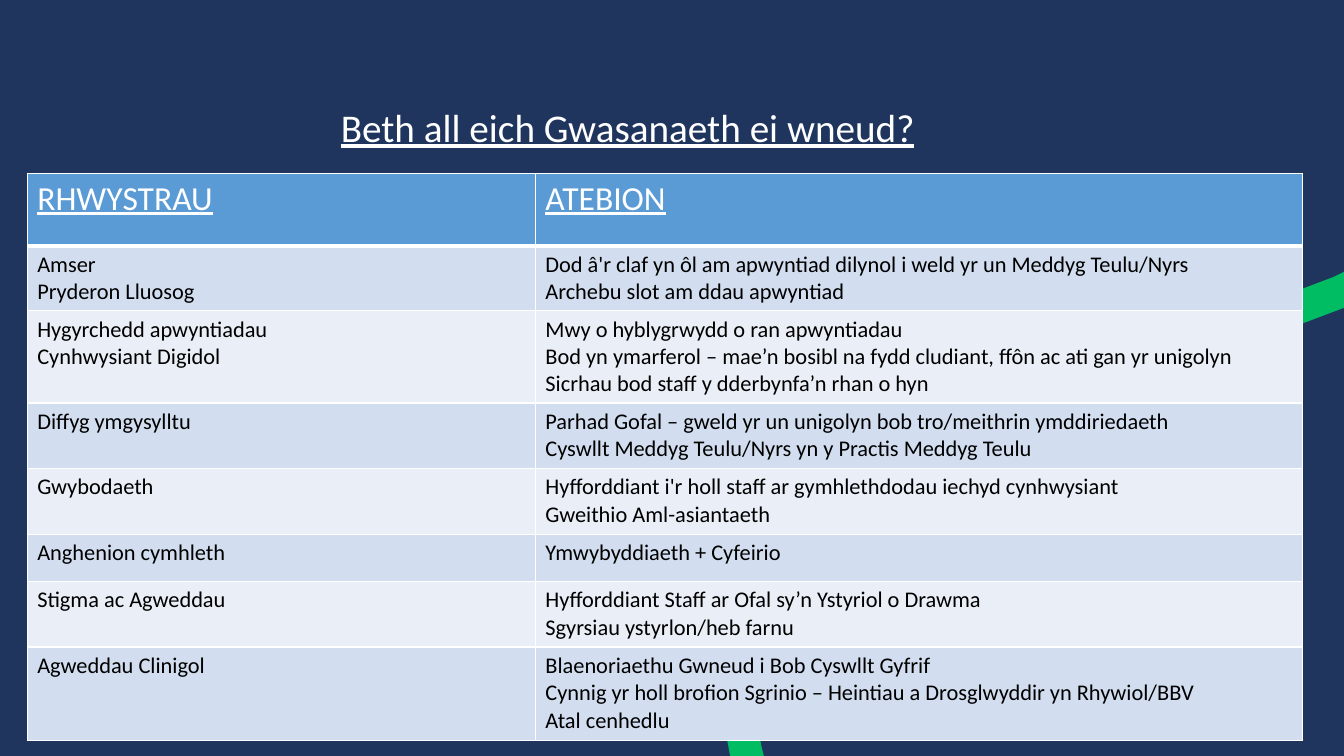
"""Build the Welsh slide on barriers to care and what a service can do about them."""
from dataclasses import dataclass

from lxml.etree import SubElement
from pptx import Presentation
from pptx.dml.color import RGBColor
from pptx.enum.text import MSO_ANCHOR, PP_ALIGN
from pptx.oxml.ns import qn
from pptx.util import Inches, Pt

NAVY, GREEN, BLUE, WHITE, BLACK = "1F355E", "00BC62", "5B9BD5", "FFFFFF", "000000"
BANDS = ("D2DEEF", "EAEFF7")
TITLE_FONT = {"name": "Calibri", "size": Pt(28), "bold": False, "underline": True}
HEADER_FONT = TITLE_FONT | {"size": Pt(24)}
BODY_FONT = TITLE_FONT | {"size": Pt(16), "underline": False}


@dataclass
class Row:
    height: float
    barriers: list[str]
    answers: list[str]


HEADER = Row(0.72, ["RHWYSTRAU"], ["ATEBION"])
BODY = [
    Row(0.63, ["Amser", "Pryderon Lluosog"],
        ["Dod â'r claf yn ôl am apwyntiad dilynol i weld yr un Meddyg Teulu/Nyrs",
         "Archebu slot am ddau apwyntiad"]),
    Row(0.9, ["Hygyrchedd apwyntiadau", "Cynhwysiant Digidol"],
        ["Mwy o hyblygrwydd o ran apwyntiadau",
         "Bod yn ymarferol – mae’n bosibl na fydd cludiant, ffôn ac ati gan yr unigolyn",
         "Sicrhau bod staff y dderbynfa’n rhan o hyn"]),
    Row(0.65, ["Diffyg ymgysylltu"],
        ["Parhad Gofal – gweld yr un unigolyn bob tro/meithrin ymddiriedaeth",
         "Cyswllt Meddyg Teulu/Nyrs yn y Practis Meddyg Teulu"]),
    Row(0.65, ["Gwybodaeth"],
        ["Hyfforddiant i'r holl staff ar gymhlethdodau iechyd cynhwysiant",
         "Gweithio Aml-asiantaeth"]),
    Row(0.47, ["Anghenion cymhleth"], ["Ymwybyddiaeth + Cyfeirio"]),
    Row(0.65, ["Stigma ac Agweddau"],
        ["Hyfforddiant Staff ar Ofal sy’n Ystyriol o Drawma",
         "Sgyrsiau ystyrlon/heb farnu"]),
    Row(0.93, ["Agweddau Clinigol"],
        ["Blaenoriaethu Gwneud i Bob Cyswllt Gyfrif",
         "Cynnig yr holl brofion Sgrinio – Heintiau a Drosglwyddir yn Rhywiol/BBV",
         "Atal cenhedlu"]),
]
COLUMNS = (5.04, 7.61)

RIBBON_START = (15.09, 1.3)
RIBBON_CURVES = [
    ((15.08, 1.31), (15.1, 1.68), (13.98, 2.51)),
    ((12.34, 3.73), (8.93, 3.27), (7.65, 5.06)),
    ((6.4, 6.81), (8.57, 9.71), (8.63, 12.35)),
    ((8.64, 12.93), (6.79, 8.83), (6.28, 8.26)),
    ((5.77, 7.7), (5.69, 8.92), (5.55, 8.96)),
    ((5.42, 9), (5.51, 8.65), (5.48, 8.5)),
    ((5.48, 8.5), (5.35, 8.72), (5.35, 8.72)),
]
CURVE_STEPS = 16


def paint(fill, colour: str) -> None:
    fill.solid()
    fill.fore_color.rgb = RGBColor.from_string(colour)


def write(frame, lines: list[str], style: dict, colour: str) -> None:
    frame.text = "\n".join(lines)
    for paragraph in frame.paragraphs:
        paragraph.alignment = PP_ALIGN.LEFT
        for run in paragraph.runs:
            for key, value in style.items():
                setattr(run.font, key, value)
            paint(run.font.fill, colour)


def add_borders(cell, bottom: float) -> None:
    properties = cell._tc.get_or_add_tcPr()
    widths = {"a:lnL": 1, "a:lnR": 1, "a:lnT": 1, "a:lnB": bottom}
    for position, (tag, width) in enumerate(widths.items()):
        edge = SubElement(properties, qn(tag), w=str(Pt(width)))
        SubElement(SubElement(edge, qn("a:solidFill")), qn("a:srgbClr"), val=WHITE)
        properties.insert(position, edge)


def ribbon_points() -> list[tuple[int, int]]:
    points, start = [], RIBBON_START
    for first, second, end in RIBBON_CURVES:
        for step in range(1, CURVE_STEPS + 1):
            t = step / CURVE_STEPS
            u = 1 - t
            points.append(tuple(
                Inches(u**3 * a + 3 * u * u * t * b + 3 * u * t * t * c + t**3 * d)
                for a, b, c, d in zip(start, first, second, end)))
        start = end
    return points


def add_ribbon(slide) -> None:
    builder = slide.shapes.build_freeform(*map(Inches, RIBBON_START))
    builder.add_line_segments(ribbon_points(), close=False)
    ribbon = builder.convert_to_shape()
    ribbon.shadow.inherit = False
    ribbon.fill.background()
    paint(ribbon.line.fill, GREEN)
    ribbon.line.width = Pt(23.25)


def add_answers_table(slide) -> None:
    rows = [HEADER, *BODY]
    height = sum(row.height for row in rows)
    table = slide.shapes.add_table(
        len(rows), len(COLUMNS), Inches(0.27), Inches(1.72),
        Inches(sum(COLUMNS)), Inches(height)).table
    for column, width in zip(table.columns, COLUMNS):
        column.width = Inches(width)
    for index, row in enumerate(rows):
        table.rows[index].height = Inches(row.height)
        is_header = row is HEADER
        style, colour = (HEADER_FONT, WHITE) if is_header else (BODY_FONT, BLACK)
        for cell, lines in zip(table.rows[index].cells, (row.barriers, row.answers)):
            write(cell.text_frame, lines, style, colour)
            paint(cell.fill, BLUE if is_header else BANDS[(index - 1) % 2])
            add_borders(cell, bottom=3 if is_header else 1)


def add_title(slide) -> None:
    title = slide.shapes.title
    place = {"left": 3.28, "top": 0.97, "width": 8.75, "height": 0.57}
    for key, value in place.items():
        setattr(title, key, Inches(value))
    title.text_frame.vertical_anchor = MSO_ANCHOR.TOP
    write(title.text_frame, ["Beth all eich Gwasanaeth ei wneud?"], TITLE_FONT, WHITE)


def main() -> None:
    deck = Presentation()
    deck.slide_width, deck.slide_height = Inches(13.33), Inches(7.5)
    slide = deck.slides.add_slide(deck.slide_layouts[5])
    paint(slide.background.fill, NAVY)
    add_ribbon(slide)
    add_answers_table(slide)
    add_title(slide)
    deck.save("out.pptx")


if __name__ == "__main__":
    main()
